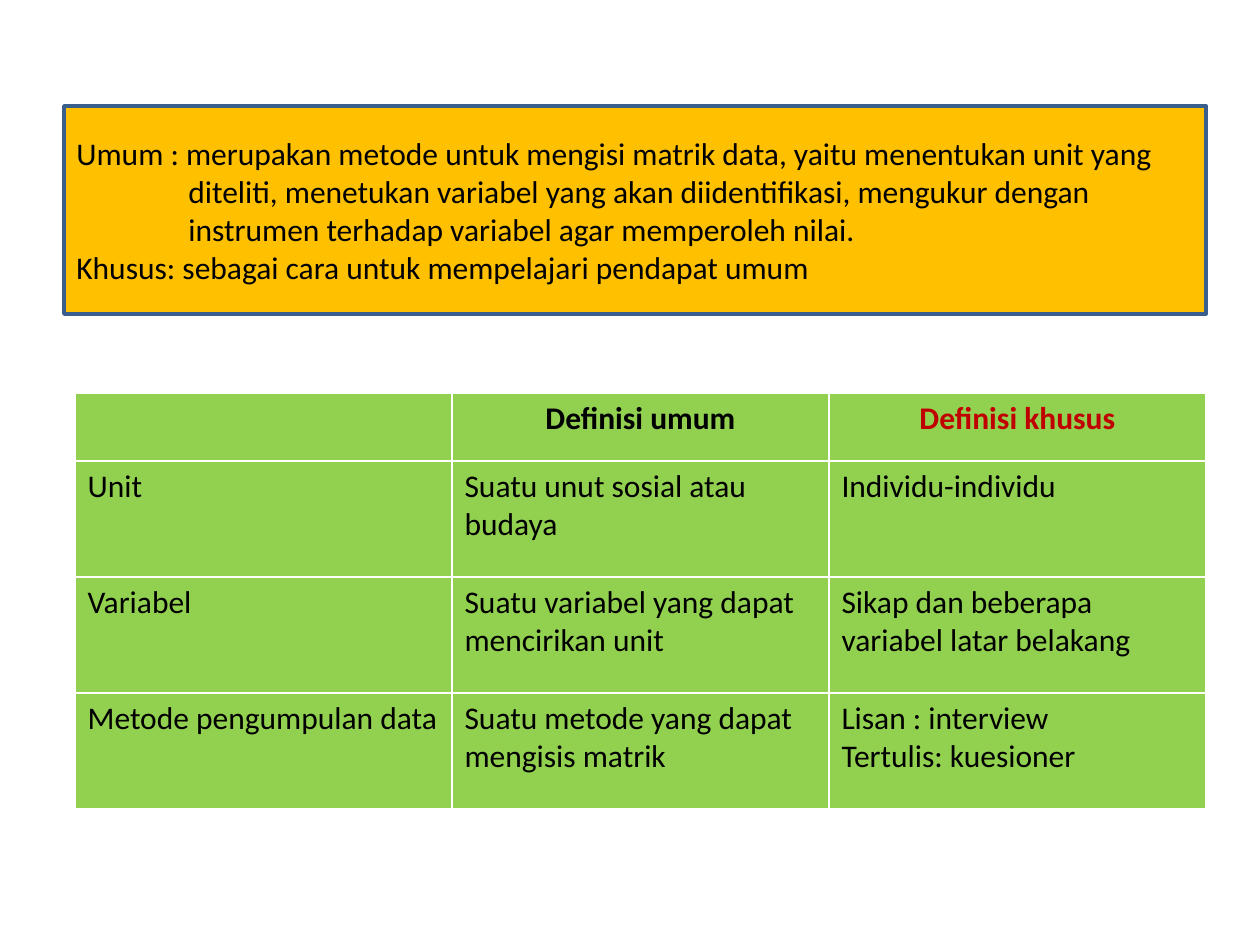
from dataclasses import dataclass

import pptx
import pptx.dml.color
import pptx.enum.shapes
import pptx.enum.text
import pptx.util

SCALE = 914400 / 126
ALIGN = pptx.enum.text.PP_ALIGN


def px(size: int) -> pptx.util.Emu:
    return pptx.util.Emu(round(size * SCALE))


def rgb(code: str) -> pptx.dml.color.RGBColor:
    return pptx.dml.color.RGBColor.from_string(code)


@dataclass(frozen=True)
class Theme:
    font: str = "Calibri"
    size: int = 18
    ink: str = "000000"
    accent: str = "C00000"
    panel: str = "FFC000"
    edge: str = "3A5F8C"
    cell: str = "92D050"


THEME = Theme()


@dataclass(frozen=True)
class Box:
    left: int
    top: int
    width: int
    height: int

    def place(self) -> tuple:
        return px(self.left), px(self.top), px(self.width), px(self.height)


@dataclass(frozen=True)
class Cell:
    text: str
    color: str = THEME.ink
    bold: bool = False
    align: ALIGN = ALIGN.LEFT


PANEL = Box(64, 106, 1142, 208)
GRID = Box(75, 393, 1131, 416)
HEAD = 68
HANG = 112

TERMS = [
    "Umum : merupakan metode untuk mengisi matrik data, yaitu menentukan unit yang "
    "diteliti, menetukan variabel yang akan diidentifikasi, mengukur dengan "
    "instrumen terhadap variabel agar memperoleh nilai.",
    "Khusus: sebagai cara untuk mempelajari pendapat umum",
]
ROWS = [
    [
        Cell("", bold=True),
        Cell("Definisi umum", bold=True, align=ALIGN.CENTER),
        Cell("Definisi khusus", THEME.accent, True, ALIGN.CENTER),
    ],
    [Cell("Unit"), Cell("Suatu unut sosial atau budaya"), Cell("Individu-individu")],
    [
        Cell("Variabel"),
        Cell("Suatu variabel yang dapat mencirikan unit"),
        Cell("Sikap dan beberapa variabel latar belakang"),
    ],
    [
        Cell("Metode pengumpulan data"),
        Cell("Suatu metode yang dapat mengisis matrik"),
        Cell("Lisan : interview\nTertulis: kuesioner"),
    ],
]


def style(frame, color: str, bold: bool, align: ALIGN) -> None:
    for para in frame.paragraphs:
        para.alignment = align
        para.font.name = THEME.font
        para.font.size = pptx.util.Pt(THEME.size)
        para.font.bold = bold
        para.font.color.rgb = rgb(color)


def fill(item, color: str) -> None:
    item.fill.solid()
    item.fill.fore_color.rgb = rgb(color)


def draw_panel(slide, box: Box, terms: list[str]) -> None:
    shape = slide.shapes.add_shape(
        pptx.enum.shapes.MSO_SHAPE.RECTANGLE, *box.place()
    )
    shape.shadow.inherit = False
    fill(shape, THEME.panel)
    shape.line.color.rgb = rgb(THEME.edge)
    shape.line.width = pptx.util.Pt(2)
    frame = shape.text_frame
    frame.word_wrap = True
    frame.vertical_anchor = pptx.enum.text.MSO_ANCHOR.MIDDLE
    frame.text = "\n".join(terms)
    style(frame, THEME.ink, False, ALIGN.LEFT)
    for para in frame.paragraphs:
        props = para._p.get_or_add_pPr()
        props.set("marL", str(px(HANG)))
        props.set("indent", str(-px(HANG)))


def draw_table(slide, box: Box, rows: list[list[Cell]]) -> None:
    count, width = len(rows), len(rows[0])
    table = slide.shapes.add_table(count, width, *box.place()).table
    for col in table.columns:
        col.width = px(box.width // width)
    for index, row in enumerate(table.rows):
        row.height = px((box.height - HEAD) // (count - 1) if index else HEAD)
        for cell, data in zip(row.cells, rows[index]):
            cell.text = data.text
            fill(cell, THEME.cell)
            style(cell.text_frame, data.color, data.bold, data.align)


def main() -> None:
    deck = pptx.Presentation()
    deck.slide_width, deck.slide_height = px(1260), px(945)
    slide = deck.slides.add_slide(deck.slide_layouts[6])
    draw_panel(slide, PANEL, TERMS)
    draw_table(slide, GRID, ROWS)
    deck.save("out.pptx")


if __name__ == "__main__":
    main()
